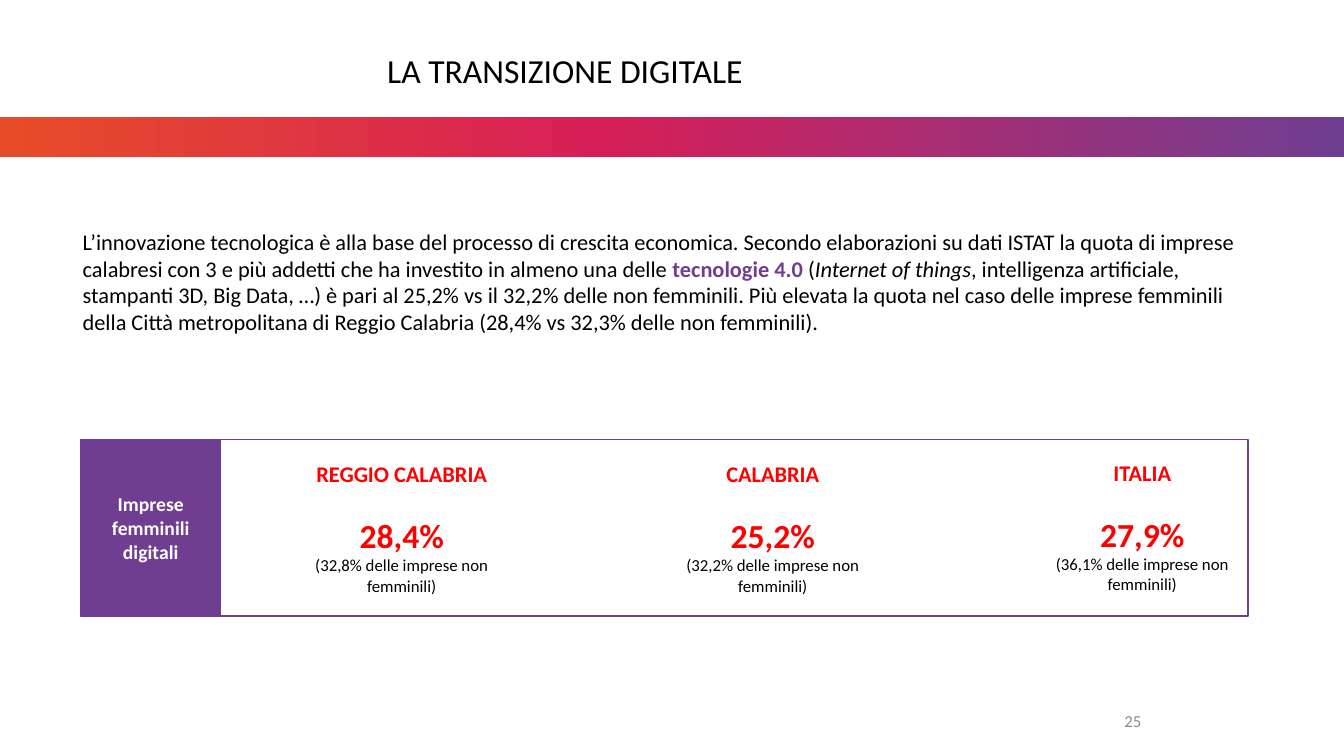
from copy import deepcopy

from pptx import Presentation
from pptx.dml.color import RGBColor
from pptx.enum.shapes import MSO_SHAPE
from pptx.enum.text import MSO_ANCHOR, PP_ALIGN
from pptx.oxml.ns import qn
from pptx.util import Inches, Pt

RECT = MSO_SHAPE.RECTANGLE
TOP, MIDDLE = MSO_ANCHOR.TOP, MSO_ANCHOR.MIDDLE
LEFT, CENTER, RIGHT = PP_ALIGN.LEFT, PP_ALIGN.CENTER, PP_ALIGN.RIGHT

ORANGE = RGBColor(0xE7, 0x4C, 0x29)
MAGENTA = RGBColor(0xD6, 0x1F, 0x58)
PURPLE = RGBColor(0x6F, 0x3E, 0x91)
RED = RGBColor(0xFF, 0x00, 0x00)
BLACK = RGBColor(0x00, 0x00, 0x00)
WHITE = RGBColor(0xFF, 0xFF, 0xFF)
GREY = RGBColor(0x8C, 0x8C, 0x8C)

FONT = "Calibri"
BAND_STOPS = [(0, ORANGE), (0.45, MAGENTA), (1, PURPLE)]
PANEL_TOP, PANEL_HEIGHT = 4.36, 1.75

INTRO = [
    ("L’innovazione tecnologica è alla base del processo di crescita economica. "
     "Secondo elaborazioni su dati ISTAT la quota di imprese calabresi con 3 e più "
     "addetti che ha investito in almeno una delle ", {}),
    ("tecnologie 4.0 ", {"bold": True, "color": PURPLE}),
    ("(", {}),
    ("Internet of things", {"italic": True}),
    (", intelligenza artificiale, stampanti 3D, Big Data, …) è pari al 25,2% vs il "
     "32,2% delle non femminili. Più elevata la quota nel caso delle imprese femminili "
     "della Città metropolitana di Reggio Calabria (28,4% vs 32,3% delle non "
     "femminili).", {}),
]

# left, top, width, territory, women's share, other firms' share
TERRITORIES = [
    (2.92, 4.52, 2.13, "REGGIO CALABRIA", "28,4%", "32,8%"),
    (6.6, 4.52, 2.13, "CALABRIA", "25,2%", "32,2%"),
    (10.28, 4.51, 2.1, "ITALIA", "27,9%", "36,1%"),
]


def add_run(p, text, size, color=BLACK, **styles):
    r = p.add_run()
    r.text = text
    r.font.color.rgb = color
    for name, value in {"name": FONT, "size": Pt(size), **styles}.items():
        setattr(r.font, name, value)


def add_paragraph(tf, first, **formats):
    """Return the first or a further paragraph of tf, formatted."""
    p = tf.paragraphs[0] if first else tf.add_paragraph()
    for name, value in formats.items():
        setattr(p, name, value)
    return p


def place(sp, left, top, width, height):
    sp.left, sp.top = Inches(left), Inches(top)
    sp.width, sp.height = Inches(width), Inches(height)


def add_rect(s, left, top, width, height, fill=None, line=None):
    sp = s.shapes.add_shape(
        RECT, Inches(left), Inches(top), Inches(width), Inches(height))
    sp.shadow.inherit = False
    if fill is None:
        sp.fill.background()
    else:
        sp.fill.solid()
        sp.fill.fore_color.rgb = fill
    if line is None:
        sp.line.fill.background()
    else:
        sp.line.color.rgb = line
        sp.line.width = Pt(1)
    return sp


def add_textbox(s, left, top, width, height):
    tf = s.shapes.add_textbox(
        Inches(left), Inches(top), Inches(width), Inches(height)).text_frame
    tf.word_wrap = True
    return tf


def add_gradient_band(s):
    fill = add_rect(s, 0, 1.16, 13.33, 0.4).fill
    fill.gradient()
    fill.gradient_angle = 0
    stops = fill._fill._gradFill.find(qn("a:gsLst"))
    stops.append(deepcopy(stops[-1]))
    for stop, (position, color) in zip(fill.gradient_stops, BAND_STOPS):
        stop.position = position
        stop.color.rgb = color


def fill_title(s):
    title = s.shapes.title
    place(title, 3.74, 0.49, 8.88, 0.64)
    tf = title.text_frame
    tf.vertical_anchor = TOP
    p = add_paragraph(tf, True, alignment=LEFT, line_spacing=0.9)
    add_run(p, "LA TRANSIZIONE DIGITALE", 24)


def fill_intro(s):
    body = s.placeholders[1]
    place(body, 0.72, 2.21, 11.89, 1.18)
    p = add_paragraph(body.text_frame, True, alignment=LEFT, space_before=Pt(0))
    pPr = p._p.get_or_add_pPr()
    pPr.set("marL", "0")
    pPr.set("indent", "0")
    pPr.append(pPr.makeelement(qn("a:buNone"), {}))
    for text, styles in INTRO:
        add_run(p, text, 16, **styles)


def add_panel_label(s):
    tf = add_rect(s, 0.8, PANEL_TOP, 1.39, PANEL_HEIGHT, fill=PURPLE).text_frame
    tf.word_wrap = True
    tf.vertical_anchor = MIDDLE
    for i, text in enumerate(["Imprese", "femminili", "digitali"]):
        p = add_paragraph(tf, i == 0, alignment=CENTER)
        add_run(p, text, 14, WHITE, bold=True)


def add_territory(s, left, top, width, name, share, others):
    tf = add_textbox(s, left, top, width, 1.45)
    lines = [
        (name, 16, RED, True, 0),
        (share, 24, RED, True, 19.5),
        (f"({others} delle imprese non femminili)", 12, BLACK, False, 0),
    ]
    for i, (text, size, color, bold, gap) in enumerate(lines):
        p = add_paragraph(tf, i == 0, alignment=CENTER, space_before=Pt(gap))
        add_run(p, text, size, color, bold=bold)


def add_page_number(s):
    tf = add_textbox(s, 8.42, 6.95, 3, 0.4)
    tf.vertical_anchor = MIDDLE
    add_run(add_paragraph(tf, True, alignment=RIGHT), "25", 12, GREY)


def main():
    prs = Presentation()
    prs.slide_width, prs.slide_height = Inches(13.33), Inches(7.5)
    s = prs.slides.add_slide(prs.slide_layouts[1])
    add_gradient_band(s)
    fill_title(s)
    fill_intro(s)
    add_panel_label(s)
    add_rect(s, 0.8, PANEL_TOP, 11.58, PANEL_HEIGHT, line=PURPLE)
    for territory in TERRITORIES:
        add_territory(s, *territory)
    add_page_number(s)
    prs.save("out.pptx")


if __name__ == "__main__":
    main()
